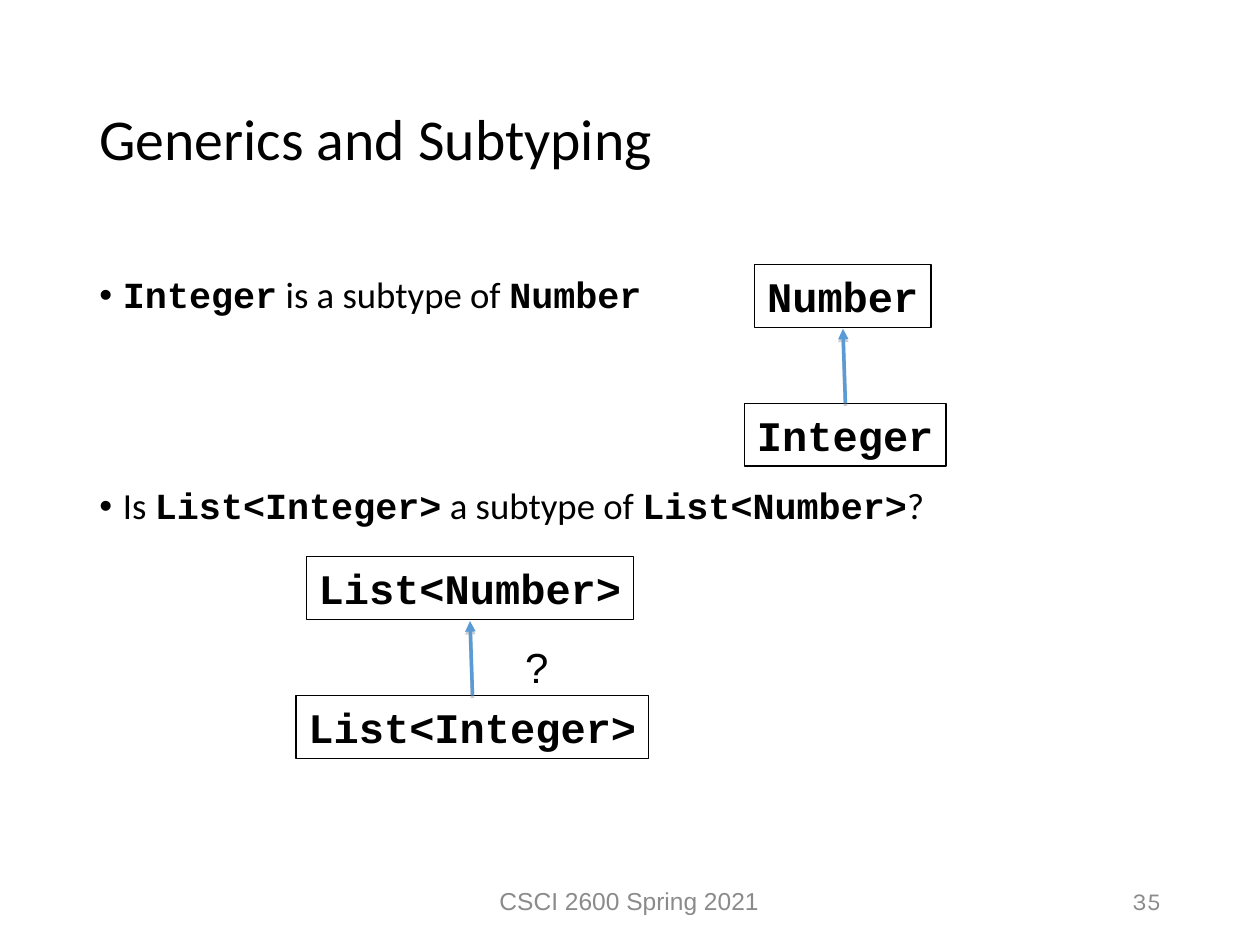
from typing import NamedTuple

from lxml.etree import SubElement
from pptx import Presentation
from pptx.dml.color import RGBColor as Rgb
from pptx.enum.shapes import MSO_CONNECTOR as Connector, MSO_SHAPE as Shape
from pptx.enum.text import MSO_ANCHOR as Anchor, MSO_AUTO_SIZE as AutoSize, PP_ALIGN as Align
from pptx.oxml.ns import qn
from pptx.util import Pt

COLORS = {"text": "000000", "footer": "8B8B8B", "arrow": "5B9BD5", "shadow": "808080"}
CODE = {"name": "Courier New", "bold": True}
PROSE = {"name": "Calibri", "bold": False}
BOX_HEIGHT = 36
LEVEL_STEP = 79.2  # from the top of a supertype box to its subtype box


class Area(NamedTuple):
    left: float
    top: float
    width: float
    height: float


class TypeBox(NamedTuple):
    name: str
    left: float
    width: float


class Hierarchy(NamedTuple):
    top: float
    supertype: TypeBox
    subtype: TypeBox


class Bullet(NamedTuple):
    space_before: float
    spans: list


class Label(NamedTuple):
    text: str
    area: Area
    align: Align
    anchor: Anchor
    wrap: bool
    font: dict


HIERARCHIES = [
    Hierarchy(151.2, TypeBox("Number", 431.3, 100.8), TypeBox("Integer", 425.5, 115.2)),
    Hierarchy(318.2, TypeBox("List<Number>", 175, 187.2), TypeBox("List<Integer>", 169.2, 201.6)),
]
BULLETS = [
    Bullet(7.5, [("Integer", CODE), (" is a subtype of ", PROSE), ("Number", CODE)]),
    Bullet(98, [("Is ", PROSE), ("List<Integer>", CODE), (" a subtype of ", PROSE),
                ("List<Number>", CODE), ("?", PROSE)]),
]
LABELS = [
    Label("CSCI 2600 Spring 2021", Area(238.3, 500.4, 242.6, 28.8), Align.CENTER, Anchor.MIDDLE,
          True, {"name": "Arial", "size": Pt(14), "color": "footer"}),
    Label("35", Area(508.3, 500.4, 162, 28.8), Align.RIGHT, Anchor.MIDDLE,
          True, {"name": "Karla", "size": Pt(14), "color": "footer"}),
    Label("?", Area(293, 362.9, 27.4, 36), Align.LEFT, Anchor.TOP,
          False, {"name": "Arial", "size": Pt(24), "color": "text"}),
]


def in_points(*lengths: float) -> list:
    return [Pt(length) for length in lengths]


def set_values(target, values: dict) -> None:
    for name, value in values.items():
        setattr(target, name, value)


def add_span(para, text: str, color: str = "text", **values) -> None:
    span = para.add_run()
    span.text = text
    set_values(span.font, values)
    span.font.color.rgb = Rgb.from_string(COLORS[color])


def write_title(page) -> None:
    title = page.shapes.title
    set_values(title, dict(zip(("left", "top", "width", "height"),
                               in_points(49.7, 28.8, 620.6, 104.4))))
    set_values(title.text_frame, {"vertical_anchor": Anchor.MIDDLE, "auto_size": AutoSize.NONE})
    para = title.text_frame.paragraphs[0]
    set_values(para, {"alignment": Align.LEFT, "line_spacing": 0.9})
    add_span(para, "Generics and Subtyping", name="Calibri", size=Pt(33))


def add_bullets(page, area: Area, bullets: list) -> None:
    frame = page.shapes.add_textbox(*in_points(*area)).text_frame
    frame.word_wrap = True
    for index, bullet in enumerate(bullets):
        para = frame.add_paragraph() if index else frame.paragraphs[0]
        set_values(para, {"line_spacing": 0.9, "space_before": Pt(bullet.space_before)})
        props = para._p.get_or_add_pPr()
        props.set("marL", str(Pt(13.5)))
        props.set("indent", str(Pt(-13.5)))
        color = SubElement(props, qn("a:buClr"))
        SubElement(color, qn("a:srgbClr"), val=COLORS["text"])
        SubElement(props, qn("a:buFont"), typeface="Arial")
        SubElement(props, qn("a:buChar"), char="•")
        for text, font in bullet.spans:
            add_span(para, text, size=Pt(21), **font)


def add_label(page, label: Label) -> None:
    frame = page.shapes.add_textbox(*in_points(*label.area)).text_frame
    set_values(frame, {"word_wrap": label.wrap, "vertical_anchor": label.anchor})
    para = frame.paragraphs[0]
    para.alignment = label.align
    add_span(para, label.text, **label.font)


def add_type_box(page, box: TypeBox, top: float) -> None:
    shape = page.shapes.add_shape(Shape.RECTANGLE,
                                  *in_points(box.left, top, box.width, BOX_HEIGHT))
    shape.shadow.inherit = False
    shape.fill.background()
    shape.line.color.rgb = Rgb.from_string(COLORS["text"])
    shape.line.width = Pt(0.75)
    set_values(shape.text_frame, {"word_wrap": False, "vertical_anchor": Anchor.TOP})
    para = shape.text_frame.paragraphs[0]
    para.alignment = Align.LEFT
    add_span(para, box.name, size=Pt(24), **CODE)


def add_arrow(page, start: tuple, end: tuple) -> None:
    """Draw an arrow with its head at end and a faint shadow below it."""
    arrow = page.shapes.add_connector(Connector.STRAIGHT, *in_points(*start, *end))
    arrow.line.color.rgb = Rgb.from_string(COLORS["arrow"])
    arrow.line.width = Pt(2)
    SubElement(arrow.line._get_or_add_ln(), qn("a:tailEnd"), type="triangle")
    effects = SubElement(arrow._element.spPr, qn("a:effectLst"))
    shadow = SubElement(effects, qn("a:outerShdw"), blurRad="0", dist=str(Pt(1.6)),
                        dir="5400000", rotWithShape="0")
    color = SubElement(shadow, qn("a:srgbClr"), val=COLORS["shadow"])
    SubElement(color, qn("a:alpha"), val="38000")


def add_hierarchy(page, hierarchy: Hierarchy) -> None:
    top, supertype, subtype = hierarchy
    subtype_top = top + LEVEL_STEP
    add_type_box(page, supertype, top)
    add_type_box(page, subtype, subtype_top)
    add_arrow(page, (subtype.left + subtype.width / 2, subtype_top),
              (supertype.left + supertype.width / 2, top + BOX_HEIGHT + 0.7))


def main() -> None:
    deck = Presentation()
    set_values(deck, {"slide_width": Pt(720), "slide_height": Pt(540)})
    page = deck.slides.add_slide(deck.slide_layouts[5])
    write_title(page)
    add_bullets(page, Area(49.7, 154.8, 620.6, 342.7), BULLETS)
    for hierarchy in HIERARCHIES:
        add_hierarchy(page, hierarchy)
    for label in LABELS:
        add_label(page, label)
    deck.save("out.pptx")


if __name__ == "__main__":
    main()
